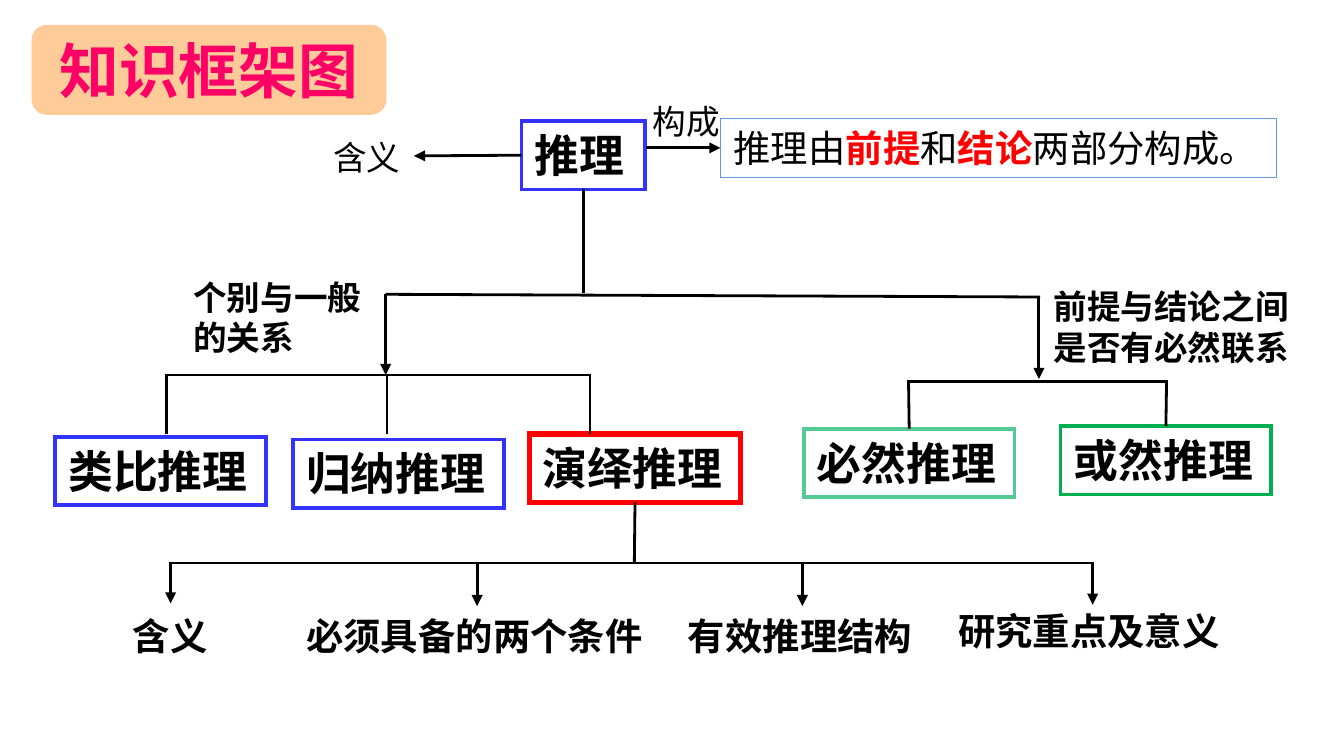
"""Build the reasoning knowledge-framework slide."""
from dataclasses import dataclass
from typing import Optional

from lxml import etree
from pptx import Presentation
from pptx import util as u
from pptx.dml.color import RGBColor
from pptx.enum import shapes, text
from pptx.oxml.ns import qn

COLORS = {
    "black": "000000", "red": "FF0000", "blue": "3333FF", "sky": "6096E6",
    "mint": "56CA95", "green": "00B050", "peach": "FFCC99", "pink": "FF0066",
}
CJK = "Noto Sans CJK SC"
TOP, LEFT, BOTTOM = 0, 1, 2


@dataclass
class Span:
    words: str
    color: str = "black"
    bold: bool = True


@dataclass
class Box:
    name: str
    at: tuple[float, float, float, float]
    lines: list[list[Span]]
    size: int
    font: str = "Arial"
    border: Optional[str] = None
    weight: float = 2
    fill: Optional[str] = None
    wrap: bool = False


@dataclass
class Line:
    start: tuple[float, float]
    end: tuple[float, float]
    arrow: bool = False
    start_join: Optional[tuple[str, int]] = None
    end_join: Optional[tuple[str, int]] = None


def rgb(name: str) -> RGBColor:
    return RGBColor.from_string(COLORS[name])


def concept(words: str, left: float, top: float, width: float = 1.57,
            border: str = "blue", weight: float = 2) -> Box:
    return Box(words, (left, top, width, 0.51), [[Span(words)]], 24,
               border=border, weight=weight, wrap=True)


def label(words: str, left: float, top: float, width: float) -> Box:
    return Box(words, (left, top, width, 0.4), [[Span(words, bold=False)]], 18)


def topic(words: str, left: float, top: float, width: float) -> Box:
    return Box(words, (left, top, width, 0.44), [[Span(words)]], 20)


def down_arrow(x: float, top: float, length: float) -> Line:
    return Line((x, top), (x, top + length), arrow=True)


def write_text(shape, box: Box) -> None:
    frame = shape.text_frame
    title = box.fill is not None
    settings = {
        "word_wrap": box.wrap,
        "auto_size": text.MSO_AUTO_SIZE.NONE if title else text.MSO_AUTO_SIZE.SHAPE_TO_FIT_TEXT,
        "vertical_anchor": text.MSO_ANCHOR.MIDDLE if title else text.MSO_ANCHOR.TOP,
    }
    for key, value in settings.items():
        setattr(frame, key, value)
    for index, spans in enumerate(box.lines):
        para = frame.add_paragraph() if index else frame.paragraphs[0]
        para.alignment = text.PP_ALIGN.CENTER if title else text.PP_ALIGN.LEFT
        for span in spans:
            run = para.add_run()
            run.text = span.words
            look = {"name": box.font, "size": u.Pt(box.size), "bold": span.bold}
            for key, value in look.items():
                setattr(run.font, key, value)
            run.font.color.rgb = rgb(span.color)
            etree.SubElement(run.font._element, qn("a:ea"), typeface=CJK)


def draw_box(page, box: Box):
    place = [u.Inches(value) for value in box.at]
    if box.border is None:
        shape = page.shapes.add_textbox(*place)
    else:
        preset = shapes.MSO_SHAPE.ROUNDED_RECTANGLE if box.fill else shapes.MSO_SHAPE.RECTANGLE
        shape = page.shapes.add_shape(preset, *place)
        shape.shadow.inherit = False
        shape.line.color.rgb = rgb(box.border)
        shape.line.width = u.Pt(box.weight)
        etree.SubElement(shape.line._get_or_add_ln(), qn("a:miter"), lim="800000")
        if box.fill:
            shape.fill.solid()
            shape.fill.fore_color.rgb = rgb(box.fill)
        else:
            shape.fill.background()
    write_text(shape, box)
    return shape


def draw_line(page, line: Line, drawn: dict) -> None:
    ends = [u.Inches(value) for value in (*line.start, *line.end)]
    link = page.shapes.add_connector(shapes.MSO_CONNECTOR.STRAIGHT, *ends)
    if line.start_join:
        link.begin_connect(drawn[line.start_join[0]], line.start_join[1])
    if line.end_join:
        link.end_connect(drawn[line.end_join[0]], line.end_join[1])
    link.line.color.rgb = rgb("black")
    link.line.width = u.Pt(1.5)
    if line.arrow:
        etree.SubElement(link.line._get_or_add_ln(), qn("a:tailEnd"), type="triangle")
    etree.SubElement(link._element.spPr, qn("a:effectLst"))


BOXES = [
    Box("标题", (0.24, 0.19, 2.63, 0.66), [[Span("知识框架图", "pink")]], 32,
        border="peach", weight=0.75, fill="peach"),
    label("含义", 2.38, 0.97, 0.71),
    label("构成", 4.76, 0.7, 0.71),
    concept("推理", 3.88, 0.9, width=0.92),
    Box("组成", (5.36, 0.88, 4.14, 0.44),
        [[Span("推理由", bold=False), Span("前提", "red"), Span("和", bold=False),
          Span("结论", "red"), Span("两部分构成。", bold=False)]],
        20, font=CJK, border="sky", weight=0.75),
    Box("个别与一般", (1.34, 2.01, 1.47, 0.71), [[Span("个别与一般")], [Span("的关系")]],
        18, font=CJK),
    Box("前提与结论", (7.74, 2.08, 2.06, 0.71), [[Span("前提与结论之间是否有必然联系")]],
        18, font=CJK, wrap=True),
    concept("类比推理", 0.41, 3.25),
    concept("归纳推理", 2.18, 3.27),
    concept("演绎推理", 3.94, 3.23, border="red", weight=3),
    concept("必然推理", 5.98, 3.19, border="mint"),
    concept("或然推理", 7.89, 3.17, border="green"),
    topic("含义", 0.89, 4.51, 0.77),
    topic("必须具备的两个条件", 2.18, 4.51, 2.74),
    topic("有效推理结构", 5.02, 4.51, 1.9),
    topic("研究重点及意义", 7.03, 4.48, 2.18),
]

LINES = [
    Line((3.88, 1.16), (3.08, 1.16), arrow=True, start_join=("推理", LEFT)),
    Line((4.81, 1.1), (5.36, 1.1), arrow=True, end_join=("组成", LEFT)),
    Line((4.34, 2.18), (4.34, 1.41), end_join=("推理", BOTTOM)),
    Line((7.74, 2.21), (2.87, 2.19)),
    down_arrow(2.87, 2.19, 0.6),
    down_arrow(7.73, 2.22, 0.6),
    Line((4.39, 2.79), (1.24, 2.79)),
    *[Line((x, 3.23), (x, 2.78)) for x in (1.24, 2.88, 4.39)],
    Line((8.69, 2.84), (6.75, 2.84)),
    Line((6.76, 2.84), (6.76, 3.19), end_join=("必然推理", TOP)),
    Line((8.68, 2.84), (8.68, 3.17), end_join=("或然推理", TOP)),
    Line((4.72, 4.19), (4.72, 3.74), end_join=("演绎推理", BOTTOM)),
    Line((8.14, 4.19), (1.26, 4.19)),
    *[down_arrow(x, top, 0.31)
      for x, top in ((1.27, 4.18), (3.55, 4.2), (5.97, 4.2), (8.13, 4.19))],
]


def main() -> None:
    deck = Presentation()
    deck.slide_width = u.Inches(10)
    deck.slide_height = deck.slide_width * 9 // 16
    page = deck.slides.add_slide(deck.slide_layouts[6])
    drawn = {box.name: draw_box(page, box) for box in BOXES}
    for line in LINES:
        draw_line(page, line, drawn)
    deck.save("out.pptx")


if __name__ == "__main__":
    main()
